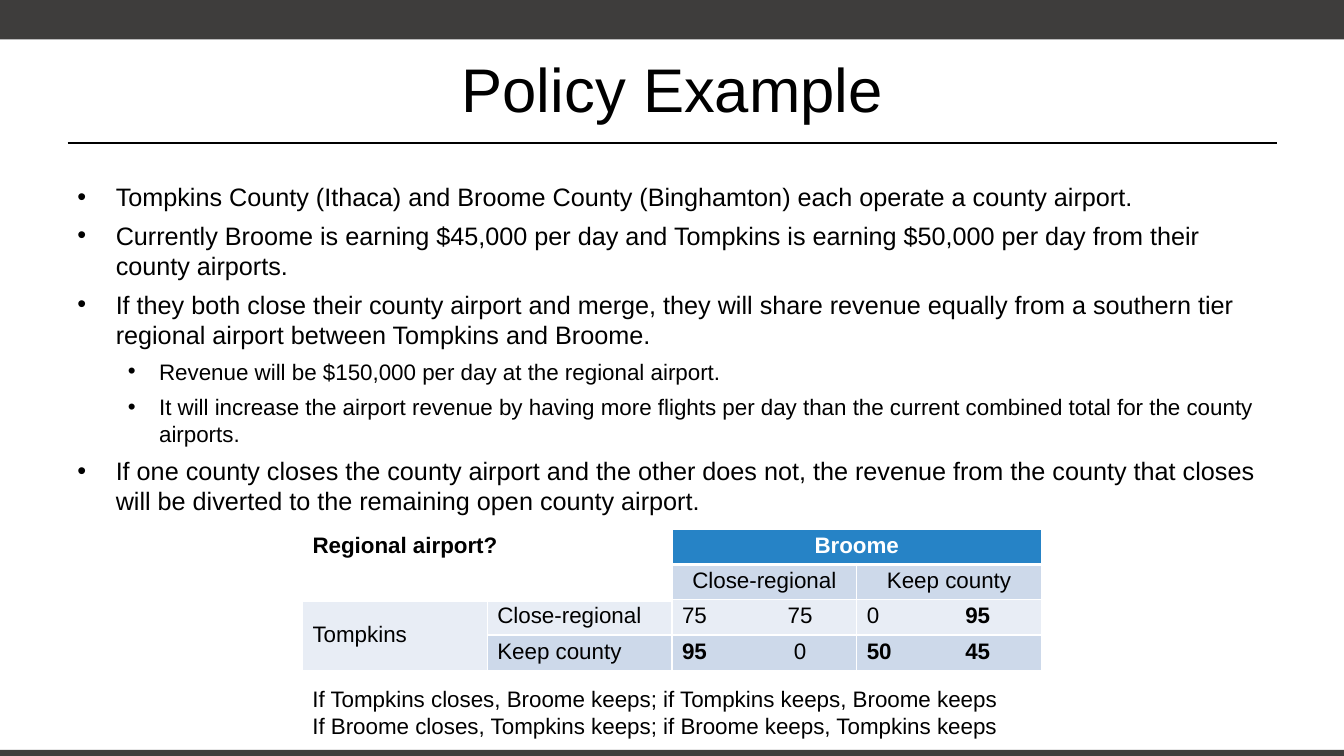
import dataclasses

import lxml.etree
import pptx
import pptx.dml.color
import pptx.enum.shapes
import pptx.enum.text
import pptx.oxml.ns
import pptx.util

Inches = pptx.util.Inches
Pt = pptx.util.Pt
Align = pptx.enum.text.PP_ALIGN
Anchor = pptx.enum.text.MSO_ANCHOR


@dataclasses.dataclass(frozen=True)
class Theme:
    font: str = "Arial"
    text: str = "000000"
    white: str = "FFFFFF"
    bar: str = "3E3D3C"
    header: str = "2683C6"
    dark_band: str = "CDD9EA"
    light_band: str = "E8EDF5"
    title_size: int = 44
    body_size: int = 18
    small_size: int = 16


THEME = Theme()

BULLETS = [
    (0, "Tompkins County (Ithaca) and Broome County (Binghamton) each operate a county airport."),
    (0, "Currently Broome is earning $45,000 per day and Tompkins is earning $50,000 per day "
        "from their county airports."),
    (0, "If they both close their county airport and merge, they will share revenue equally "
        "from a southern tier regional airport between Tompkins and Broome."),
    (1, "Revenue will be $150,000 per day at the regional airport."),
    (1, "It will increase the airport revenue by having more flights per day than the current "
        "combined total for the county airports."),
    (0, "If one county closes the county airport and the other does not, the revenue from the "
        "county that closes will be diverted to the remaining open county airport."),
]
BULLET_LEVELS = [(THEME.body_size, 0.38, -0.38), (THEME.small_size, 0.81, -0.31)]
CONCLUSIONS = [
    "If Tompkins closes, Broome keeps; if Tompkins keeps, Broome keeps",
    "If Broome closes, Tompkins keeps; if Broome keeps, Tompkins keeps",
]

LABELS = [
    (0, 0, "Regional airport?", {"bold": True}, Align.LEFT),
    (0, 2, "Broome", {"bold": True, "color": THEME.white}, Align.CENTER),
    (1, 2, "Close-regional", {}, Align.CENTER),
    (1, 3, "Keep county", {}, Align.CENTER),
    (2, 0, "Tompkins", {}, Align.LEFT),
    (2, 1, "Close-regional", {}, Align.LEFT),
    (3, 1, "Keep county", {}, Align.LEFT),
]
PAYOFFS = [
    (2, 2, ("75", False), ("75", False)),
    (2, 3, ("0", False), ("95", True)),
    (3, 2, ("95", True), ("0", False)),
    (3, 3, ("50", True), ("45", True)),
]
PAYOFF_TABS = {2: 1.17, 3: 1.1}
MERGES = [((0, 0), (1, 1)), ((0, 2), (0, 3)), ((2, 0), (3, 0))]


def color(value):
    return pptx.dml.color.RGBColor.from_string(value)


def set_values(target, values):
    for name, value in values.items():
        setattr(target, name, value)


def add_element(parent, tag, **attributes):
    element = lxml.etree.SubElement(parent, pptx.oxml.ns.qn(tag))
    for name, value in attributes.items():
        element.set(name, str(value))
    return element


def add_run(paragraph, text, size, **values):
    run = paragraph.add_run()
    run.text = text
    run.font.color.rgb = color(values.pop("color", THEME.text))
    set_values(run.font, {"name": THEME.font, "size": Pt(size), "bold": False, **values})


def add_text_frame(slide, box):
    text_frame = slide.shapes.add_textbox(*map(Inches, box)).text_frame
    text_frame.word_wrap = True
    return text_frame


def next_paragraph(text_frame, index):
    return text_frame.add_paragraph() if index else text_frame.paragraphs[0]


def add_bar(slide, box):
    bar = slide.shapes.add_shape(pptx.enum.shapes.MSO_SHAPE.RECTANGLE, *map(Inches, box))
    bar.shadow.inherit = False
    bar.fill.solid()
    bar.fill.fore_color.rgb = color(THEME.bar)
    bar.line.fill.background()


def add_title(slide, box):
    left, top, width, height = box
    title = slide.shapes.title
    set_values(title, dict(zip(("left", "top", "width", "height"), map(Inches, box))))
    set_values(title.text_frame, {"vertical_anchor": Anchor.MIDDLE, "word_wrap": True})
    paragraph = title.text_frame.paragraphs[0]
    paragraph.alignment = Align.CENTER
    add_run(paragraph, "Policy Example", THEME.title_size)
    rule_top = Inches(top + height - 0.08)
    rule = slide.shapes.add_connector(
        pptx.enum.shapes.MSO_CONNECTOR.STRAIGHT,
        Inches(left), rule_top, Inches(left + width), rule_top)
    rule.line.color.rgb = color(THEME.text)
    rule.line.width = Pt(1.25)
    add_element(rule._element.spPr, "a:effectLst")


def add_bullets(slide, box):
    text_frame = add_text_frame(slide, box)
    for index, (level, text) in enumerate(BULLETS):
        size, margin, indent = BULLET_LEVELS[level]
        paragraph = next_paragraph(text_frame, index)
        set_values(paragraph, {"level": level, "space_before": Pt(6)})
        properties = paragraph._p.get_or_add_pPr()
        properties.set("marL", str(Inches(margin)))
        properties.set("indent", str(Inches(indent)))
        add_element(properties, "a:buFont", typeface=THEME.font)
        add_element(properties, "a:buChar", char="•")
        add_run(paragraph, text, size)


def set_borders(cell, row):
    properties = cell._tc.get_or_add_tcPr()
    widths = {"L": 1, "R": 1, "T": 3 if row == 1 else 1, "B": 3 if row == 0 else 1}
    for index, (side, width) in enumerate(widths.items()):
        line = add_element(properties, f"a:ln{side}", w=Pt(width))
        fill = add_element(line, "a:solidFill")
        add_element(fill, "a:srgbClr", val=THEME.white)
        properties.insert(index, line)


def format_cell(cell, row, column):
    set_values(cell, {"margin_top": Inches(0.04), "margin_bottom": Inches(0.04),
                      "vertical_anchor": Anchor.MIDDLE if (row, column) == (2, 0) else Anchor.TOP})
    if row < 2 and column < 2:
        cell.fill.background()
    else:
        cell.fill.solid()
        bands = [THEME.header, THEME.dark_band, THEME.light_band, THEME.dark_band]
        band = THEME.light_band if row >= 2 and column == 0 else bands[row]
        cell.fill.fore_color.rgb = color(band)
    set_borders(cell, row)
    cell.text_frame.paragraphs[0].font.size = Pt(THEME.small_size)


def add_payoff_table(slide, box):
    table = slide.shapes.add_table(4, 4, *map(Inches, box)).table
    set_values(table, {"first_row": False, "horz_banding": False})
    for row in range(4):
        for column in range(4):
            format_cell(table.cell(row, column), row, column)
    for first, last in MERGES:
        table.cell(*first).merge(table.cell(*last))
    for row, column, text, values, alignment in LABELS:
        paragraph = table.cell(row, column).text_frame.paragraphs[0]
        paragraph.alignment = alignment
        add_run(paragraph, text, THEME.small_size, **values)
    for row, column, (own, own_bold), (other, other_bold) in PAYOFFS:
        paragraph = table.cell(row, column).text_frame.paragraphs[0]
        properties = paragraph._p.get_or_add_pPr()
        tabs = lxml.etree.Element(pptx.oxml.ns.qn("a:tabLst"))
        properties.insert(0, tabs)
        add_element(tabs, "a:tab", pos=Inches(PAYOFF_TABS[column]), algn="ctr")
        add_run(paragraph, own + "\t", THEME.small_size, bold=own_bold)
        add_run(paragraph, other, THEME.small_size, bold=other_bold)


def add_conclusions(slide, box):
    text_frame = add_text_frame(slide, box)
    for index, text in enumerate(CONCLUSIONS):
        add_run(next_paragraph(text_frame, index), text, THEME.small_size)


def main():
    presentation = pptx.Presentation()
    set_values(presentation, {"slide_width": Inches(13.33), "slide_height": Inches(7.5)})
    slide = presentation.slides.add_slide(presentation.slide_layouts[5])
    add_bar(slide, (0, 0, 13.33, 0.39))
    add_bar(slide, (0, 7.44, 13.33, 0.06))
    add_title(slide, (0.67, 0.25, 12, 1.25))
    add_bullets(slide, (0.67, 1.75, 12, 3.4))
    add_payoff_table(slide, (3, 5.25, 7.33, 1.4))
    add_conclusions(slide, (3, 6.75, 7.33, 0.66))
    presentation.save("out.pptx")


if __name__ == "__main__":
    main()
